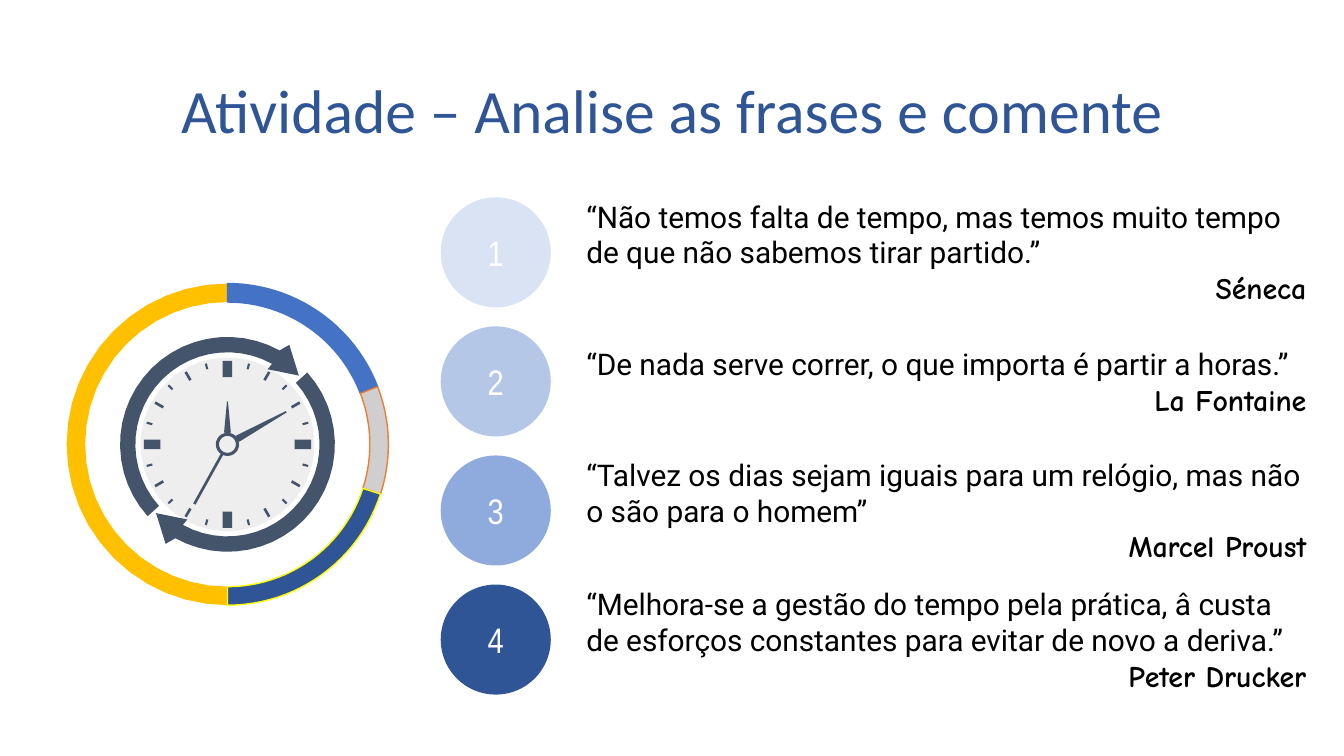
import math

from pptx import Presentation
from pptx import util as u
from pptx.dml.color import RGBColor
from pptx.enum import shapes, text
from pptx.oxml.ns import qn

WHITE = RGBColor(0xFF, 0xFF, 0xFF)
BLACK = RGBColor(0x00, 0x00, 0x00)
NAVY = RGBColor(0x2F, 0x55, 0x97)
BLUE = RGBColor(0x44, 0x72, 0xC4)
ORANGE = RGBColor(0xED, 0x7D, 0x31)
GOLD = RGBColor(0xFF, 0xC0, 0x00)
YELLOW = RGBColor(0xFF, 0xFF, 0x00)
GREY = RGBColor(0xD0, 0xCE, 0xCE)
DIAL = RGBColor(0xEE, 0xEE, 0xEE)
SLATE = RGBColor(0x44, 0x54, 0x6A)
STEPS = [RGBColor(0xDA, 0xE3, 0xF3), RGBColor(0xB4, 0xC7, 0xE7),
         RGBColor(0x8F, 0xAA, 0xDC), NAVY]

QUOTES = [
    ("“Não temos falta de tempo, mas temos muito tempo de que não sabemos tirar partido.”", "Séneca"),
    ("“De nada serve correr, o que importa é partir a horas.”", "La Fontaine"),
    ("“Talvez os dias sejam iguais para um relógio, mas não o são para o homem”", "Marcel Proust"),
    ("“Melhora-se a gestão do tempo pela prática, â custa de esforços constantes "
     "para evitar de novo a deriva.”", "Peter Drucker"),
]
CENTER_X, CENTER_Y = 4.3, 8.4
STEPS_PER_ARC = 24

deck = Presentation()
deck.slide_width, deck.slide_height = u.Cm(25.4), u.Cm(14.29)
page = deck.slides.add_slide(deck.slide_layouts.get_by_name("Comparison"))


def arc(radius, start, end):
    angles = [math.radians(start + (end - start) * i / STEPS_PER_ARC) for i in range(STEPS_PER_ARC + 1)]
    return [(radius * math.sin(a), -radius * math.cos(a)) for a in angles]


def add_outlines(outlines, fill, line=None):
    builder = None
    for outline in outlines:
        corners = [(u.Cm(CENTER_X + x), u.Cm(CENTER_Y + y)) for x, y in outline]
        if builder is None:
            builder = page.shapes.build_freeform(*corners[0], scale=1.0)
        else:
            builder.move_to(*corners[0])
        builder.add_line_segments(corners[1:], close=True)
    part = builder.convert_to_shape()
    part.shadow.inherit = False
    part.fill.solid()
    part.fill.fore_color.rgb = fill
    if line is None:
        part.line.fill.background()
    else:
        part.line.color.rgb = line
        part.line.width = u.Pt(0.75)


title, *quote_boxes = page.placeholders
title.left, title.top, title.width, title.height = u.Cm(1.75), u.Cm(0.76), u.Cm(21.9), u.Cm(2.77)
title.text_frame.auto_size = text.MSO_AUTO_SIZE.NONE
title.text_frame.vertical_anchor = text.MSO_ANCHOR.MIDDLE
para = title.text_frame.paragraphs[0]
para.alignment = text.PP_ALIGN.CENTER
para.line_spacing = 0.9
span = para.add_run()
span.text = "Atividade – Analise as frases e comente"
span.font.size, span.font.name, span.font.color.rgb = u.Pt(33), "Calibri", NAVY

for row, (box, (quote, author)) in enumerate(zip(quote_boxes, QUOTES)):
    box.left, box.top, box.width, box.height = u.Cm(9.3), u.Cm(3.71 + 2.44 * row), u.Cm(15.77), u.Cm(2.11)
    frame = box.text_frame
    frame.auto_size = text.MSO_AUTO_SIZE.NONE
    frame.word_wrap = True
    frame.vertical_anchor = text.MSO_ANCHOR.MIDDLE
    frame.margin_left, frame.margin_right = u.Cm(1.78), u.Cm(0.38)
    frame.margin_top = frame.margin_bottom = u.Cm(0.25)
    for para, words, font, side in (
        (frame.paragraphs[0], quote, "Roboto", text.PP_ALIGN.LEFT),
        (frame.add_paragraph(), author, "Comic Neue", text.PP_ALIGN.RIGHT),
    ):
        para.alignment = side
        para.space_before = u.Pt(0)
        properties = para._p.get_or_add_pPr()
        properties.set("marL", "0")
        properties.set("indent", "0")
        properties.append(properties.makeelement(qn("a:buNone"), {}))
        span = para.add_run()
        span.text = words
        span.font.size, span.font.name, span.font.color.rgb = u.Pt(16), font, BLACK
        span.font.bold = words == author

for row, color in enumerate(STEPS):
    badge = page.shapes.add_shape(shapes.MSO_SHAPE.OVAL, u.Cm(8.33), u.Cm(3.73 + 2.44 * row),
                                  u.Cm(2.08), u.Cm(2.08))
    badge.shadow.inherit = False
    badge.fill.solid()
    badge.fill.fore_color.rgb = color
    badge.line.fill.background()
    badge.text_frame.vertical_anchor = text.MSO_ANCHOR.MIDDLE
    para = badge.text_frame.paragraphs[0]
    para.alignment = text.PP_ALIGN.CENTER
    span = para.add_run()
    span.text = str(row + 1)
    span.font.size, span.font.name, span.font.color.rgb = u.Pt(19), "Arial Narrow", WHITE

for start, end, fill, line in (
    (180, 360, GOLD, None),
    (0, 69, BLUE, BLUE),
    (69, 108, GREY, ORANGE),
    (108, 180, NAVY, YELLOW),
):
    add_outlines([arc(3.04, start, end) + arc(2.69, end, start)], fill, line)

dial = page.shapes.add_shape(shapes.MSO_SHAPE.OVAL, u.Cm(CENTER_X - 1.64), u.Cm(CENTER_Y - 1.64),
                             u.Cm(3.28), u.Cm(3.28))
dial.shadow.inherit = False
dial.fill.solid()
dial.fill.fore_color.rgb = DIAL
dial.line.fill.background()

clock = []
for turn, sign in ((0, -1), (180, 1)):
    head = [(sign * x, sign * y) for x, y in ((1.17, -1.88), (1.35, -1.3), (0.76, -1.42))]
    clock.append(arc(2.03, 48 + turn, 209 + turn) + head + arc(1.74, 209 + turn, 48 + turn))

bars = [(0, 0.22, 0.81, 0.13, 0.02), (61, 0.22, 1.27, 0.13, 0.03), (209, 0.22, 1.29, 0.05, 0.05)]
for angle in range(0, 360, 15):
    if angle % 90 == 0:
        bars.append((angle, 1.27, 1.58, 0.18, 0.18))
    elif angle % 30 == 0:
        bars.append((angle, 1.4, 1.58, 0.05, 0.05))
    else:
        bars.append((angle, 1.47, 1.58, 0.04, 0.04))
for angle, near, far, base, tip in bars:
    sine, cosine = math.sin(math.radians(angle)), math.cos(math.radians(angle))
    corners = ((-base / 2, near), (base / 2, near), (tip / 2, far), (-tip / 2, far))
    clock.append([(x * cosine + y * sine, x * sine - y * cosine) for x, y in corners])

clock.append(arc(0.22, 0, 360))
clock.append(arc(0.16, 360, 0))
add_outlines(clock, SLATE)

deck.save("out.pptx")
